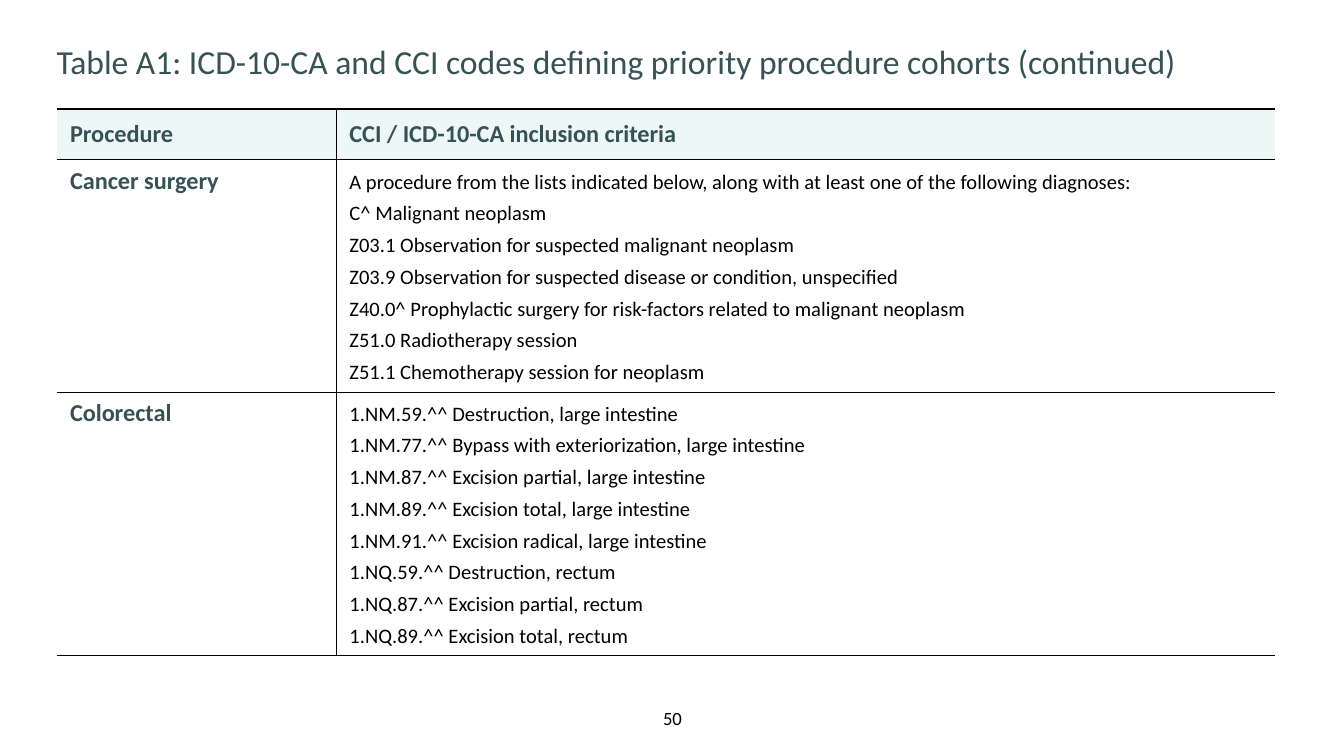
from pptx import Presentation
from pptx.dml.color import RGBColor
from pptx.enum.text import MSO_ANCHOR, PP_ALIGN
from pptx.oxml import parse_xml
from pptx.oxml.ns import nsdecls
from pptx.util import Cm, Pt

DARK, BLACK, WHITE, MINT = "365254", "000000", "FFFFFF", "EDF7F5"
HEAD = ["Procedure", "CCI / ICD-10-CA inclusion criteria"]
BODY = [
    ("Cancer surgery", [
        "A procedure from the lists indicated below, along with at least one of the following diagnoses:",
        "C^ Malignant neoplasm",
        "Z03.1 Observation for suspected malignant neoplasm",
        "Z03.9 Observation for suspected disease or condition, unspecified",
        "Z40.0^ Prophylactic surgery for risk-factors related to malignant neoplasm",
        "Z51.0 Radiotherapy session",
        "Z51.1 Chemotherapy session for neoplasm",
    ]),
    ("Colorectal", [
        "1.NM.59.^^ Destruction, large intestine",
        "1.NM.77.^^ Bypass with exteriorization, large intestine",
        "1.NM.87.^^ Excision partial, large intestine",
        "1.NM.89.^^ Excision total, large intestine",
        "1.NM.91.^^ Excision radical, large intestine",
        "1.NQ.59.^^ Destruction, rectum",
        "1.NQ.87.^^ Excision partial, rectum",
        "1.NQ.89.^^ Excision total, rectum",
    ]),
]
TITLE = {"size": Pt(18), "bold": False, "color": DARK}
LABEL = {"size": Pt(13), "bold": True, "color": DARK}
PLAIN = {"size": Pt(11), "bold": False, "color": BLACK}
SMALL = {"size": Pt(10), "bold": False, "color": BLACK}
LIST = {"line_spacing": Pt(15), "space_before": Pt(2)}


def paint(text):
    return RGBColor.from_string(text)


class Deck:
    def __init__(self, wide, high, face):
        self.deck = Presentation()
        self.deck.slide_width, self.deck.slide_height = Cm(wide), Cm(high)
        self.slide = self.deck.slides.add_slide(self.deck.slide_layouts[6])
        self.face = face

    def lay(self, frame, lines, font, form):
        for num, line in enumerate(lines):
            para = frame.add_paragraph() if num else frame.paragraphs[0]
            for key, value in form.items():
                if num or key != "space_before":
                    setattr(para, key, value)
            run = para.add_run()
            run.text = line
            run.font.name = self.face
            for key, value in font.items():
                if key == "color":
                    run.font.color.rgb = paint(value)
                else:
                    setattr(run.font, key, value)

    def text(self, box, line, font, form, anchor):
        frame = self.slide.shapes.add_textbox(*map(Cm, box)).text_frame
        style = {"margin_left": 0, "margin_right": 0, "margin_top": 0,
                 "margin_bottom": 0, "word_wrap": True,
                 "vertical_anchor": anchor}
        for key, value in style.items():
            setattr(frame, key, value)
        self.lay(frame, [line], font, form)

    def table(self, left, top, cols, rows):
        grid = self.slide.shapes.add_table(
            len(rows), len(cols), Cm(left), Cm(top),
            Cm(sum(cols)), Cm(sum(rows))).table
        for col, wide in zip(grid.columns, cols):
            col.width = Cm(wide)
        for row, high in zip(grid.rows, rows):
            row.height = Cm(high)
        return grid

    def cell(self, cell, lines, font, form, fill, anchor, edges):
        cell.vertical_anchor = anchor
        cell.fill.solid()
        cell.fill.fore_color.rgb = paint(fill)
        self.lay(cell.text_frame, lines, font, form)
        props = cell._tc.get_or_add_tcPr()
        for num, (side, width) in enumerate(zip("LRTB", edges)):
            ink = (f'<a:solidFill><a:srgbClr val="{BLACK}"/></a:solidFill>'
                   if width else "<a:noFill/>")
            props.insert(num, parse_xml(
                f'<a:ln{side} {nsdecls("a")} w="{Pt(width)}">{ink}</a:ln{side}>'))


def main():
    deck = Deck(25.4, 14.28, "Calibri")
    deck.text((11.91, 13.34, 1.6, 0.43), "50", SMALL,
              {"alignment": PP_ALIGN.CENTER}, MSO_ANCHOR.MIDDLE)
    deck.text((1.07, 0.38, 22.86, 1.12),
              "Table A1: ICD-10-CA and CCI codes defining priority procedure cohorts (continued)",
              TITLE, {"line_spacing": Pt(33)}, MSO_ANCHOR.TOP)
    grid = deck.table(1.07, 2.06, [5.28, 17.75], [0.96, 4.38, 4.98])
    sides = [(0, 0.5), (0.5, 0)]
    for col, (name, side) in enumerate(zip(HEAD, sides)):
        deck.cell(grid.cell(0, col), [name], LABEL, {}, MINT,
                  MSO_ANCHOR.MIDDLE, (*side, 1, 0.5))
    for row, (name, codes) in enumerate(BODY, 1):
        parts = [([name], LABEL, {}), (codes, PLAIN, LIST)]
        for col, (part, side) in enumerate(zip(parts, sides)):
            deck.cell(grid.cell(row, col), *part, WHITE,
                      MSO_ANCHOR.TOP, (*side, 0.5, 0.5))
    deck.deck.save("out.pptx")


if __name__ == "__main__":
    main()
